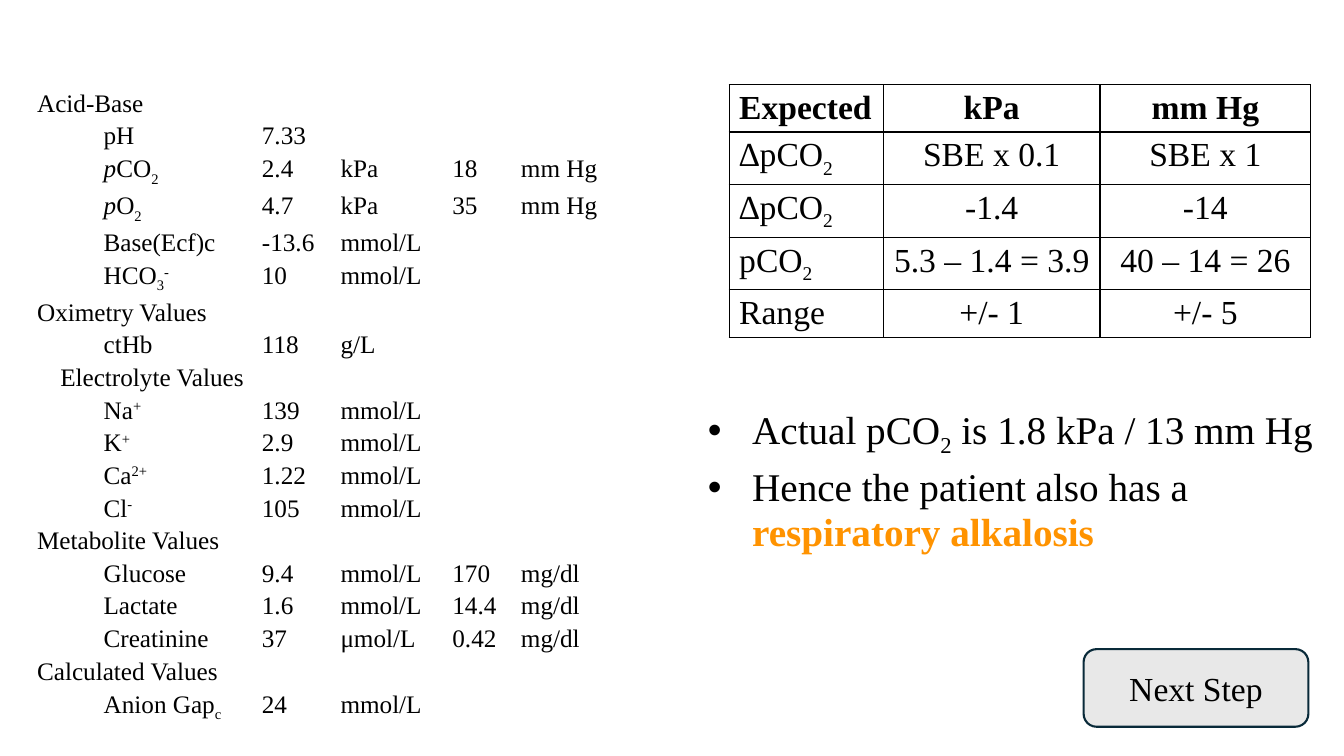
from pptx import Presentation
from pptx.dml.color import RGBColor
from pptx.enum.shapes import MSO_SHAPE as Shape
from pptx.enum.text import MSO_ANCHOR as Anchor, MSO_AUTO_SIZE as AutoSize, PP_ALIGN as Align
from pptx.oxml import parse_xml
from pptx.oxml.ns import nsdecls
from pptx.util import Inches, Pt

COLUMNS, ROWS = 80, 45
TABS = [1.38, 3.96, 13.38, 18.06, 24.72, 28.8]

VALUES = [
    "Acid-Base",
    "\t\tpH\t7.33",
    "\t\t|/p|CO|_2|\t2.4\tkPa\t18\tmm Hg",
    "\t\t|/p|O|_2|\t4.7\tkPa\t35\tmm Hg",
    "\t\tBase(Ecf)c\t-13.6\tmmol/L",
    "\t\tHCO|_3|^-|\t10\tmmol/L",
    "Oximetry Values",
    "\t\tctHb\t118\tg/L",
    "\tElectrolyte Values",
    "\t\tNa|^+|\t139\tmmol/L",
    "\t\tK|^+|\t2.9\tmmol/L",
    "\t\tCa|^2+|\t1.22\tmmol/L",
    "\t\tCl|^-|\t105\tmmol/L",
    "Metabolite Values",
    "\t\tGlucose\t9.4\tmmol/L\t170\tmg/dl",
    "\t\tLactate\t1.6\tmmol/L\t14.4\tmg/dl",
    "\t\tCreatinine\t37\tμmol/L\t0.42\tmg/dl",
    "Calculated Values",
    "\t\tAnion Gap|_c|\t24\tmmol/L",
]
EXPECTED = [
    ["Expected", "kPa", "mm Hg"],
    ["∆pCO|_2", "SBE x 0.1", "SBE x 1"],
    ["∆pCO|_2", "-1.4", "-14"],
    ["pCO|_2", "5.3 – 1.4 = 3.9", "40 – 14 = 26"],
    ["Range", "+/- 1", "+/- 5"],
]
FINDINGS = [
    "Actual pCO|_2| is 1.8 kPa / 13 mm Hg",
    "Hence the patient also has a |*respiratory alkalosis",
]


def color(value):
    return RGBColor.from_string(value)


class Sheet:
    font_name = "Times New Roman"
    ink = "000000"
    accent = "FF9300"

    def __init__(self):
        self.deck = Presentation()
        self.deck.slide_width, self.deck.slide_height = Inches(13.33), Inches(7.5)
        self.page = self.deck.slides.add_slide(self.deck.slide_layouts[1])
        title = self.page.shapes.title
        title.element.getparent().remove(title.element)

    def across(self, columns):
        return round(self.deck.slide_width * columns / COLUMNS)

    def down(self, rows):
        return round(self.deck.slide_height * rows / ROWS)

    def area(self, left, top, width, height):
        return self.across(left), self.down(top), self.across(width), self.down(height)

    def typeset(self, para, text, size, bold=False, align=Align.LEFT):
        para.alignment = align
        para.font.name, para.font.size, para.font.bold = self.font_name, Pt(size), bold
        para.font.color.rgb = color(self.ink)
        for part in text.split("|"):
            mark = part[0] if part[0] in "_^/*" else ""
            span = para.add_run()
            span.text = part[len(mark):]
            if mark in ("_", "^"):
                span._r.get_or_add_rPr().set("baseline", "-25000" if mark == "_" else "30000")
            elif mark == "/":
                span.font.italic = True
            elif mark == "*":
                span.font.bold = True
                span.font.color.rgb = color(self.accent)

    def paragraphs(self, frame, lines):
        for index, line in enumerate(lines):
            yield (frame.add_paragraph() if index else frame.paragraphs[0]), line

    def tabbed_list(self, lines, place, size):
        box = self.page.shapes.add_textbox(*self.area(*place))
        frame = box.text_frame
        frame.word_wrap, frame.auto_size = True, AutoSize.SHAPE_TO_FIT_TEXT
        stops = "".join(f'<a:tab pos="{self.across(tab)}" algn="l"/>' for tab in TABS)
        for para, line in self.paragraphs(frame, lines):
            para._p.get_or_add_pPr().append(
                parse_xml(f'<a:tabLst {nsdecls("a")}>{stops}</a:tabLst>'))
            para.line_spacing = 1.08
            self.typeset(para, line, size)

    def bullets(self, lines, place, size):
        body = self.page.placeholders[1]
        body.left, body.top, body.width, body.height = self.area(*place)
        frame = body.text_frame
        frame.word_wrap, frame.auto_size = True, AutoSize.NONE
        for para, line in self.paragraphs(frame, lines):
            props = para._p.get_or_add_pPr()
            props.set("marL", str(self.across(3)))
            props.set("indent", str(self.across(-2.64)))
            for xml in (f'<a:buClr {nsdecls("a")}><a:srgbClr val="{self.ink}"/></a:buClr>',
                        f'<a:buFont {nsdecls("a")} typeface="Arial"/>',
                        f'<a:buChar {nsdecls("a")} char="•"/>'):
                props.append(parse_xml(xml))
            para.line_spacing = 0.97
            para.space_before = Pt(0 if line == lines[0] else 5.6)
            self.typeset(para, line, size)

    def table(self, data, left, top, widths, heights, size):
        place = self.area(left, top, sum(widths), sum(heights))
        table = self.page.shapes.add_table(len(data), len(widths), *place).table
        table.first_row = table.horz_banding = False
        for column, width in zip(table.columns, widths):
            column.width = self.across(width)
        for r, (row, height) in enumerate(zip(data, heights)):
            table.rows[r].height = self.down(height)
            for c, text in enumerate(row):
                cell = table.cell(r, c)
                self.border(cell)
                cell.fill.background()
                self.typeset(cell.text_frame.paragraphs[0], text, size, bold=r == 0,
                             align=Align.CENTER if c else Align.LEFT)

    def border(self, cell):
        props = cell._tc.get_or_add_tcPr()
        for side in "LRTB":
            props.append(parse_xml(
                f'<a:ln{side} {nsdecls("a")} w="12700"><a:solidFill>'
                f'<a:srgbClr val="{self.ink}"/></a:solidFill></a:ln{side}>'))

    def button(self, text, place, size):
        button = self.page.shapes.add_shape(Shape.ROUNDED_RECTANGLE, *self.area(*place))
        button.shadow.inherit = False
        button.fill.solid()
        button.fill.fore_color.rgb = color("E8E8E8")
        button.line.color.rgb = color("092A39")
        button.line.width = Pt(1.5)
        button.text_frame.vertical_anchor = Anchor.MIDDLE
        self.typeset(button.text_frame.paragraphs[0], text, size, align=Align.CENTER)


def main():
    sheet = Sheet()
    sheet.bullets(FINDINGS, (41.17, 23.8, 38.1, 10.68), 28)
    sheet.table(EXPECTED, 43.4, 5.04, [9.18, 12.9, 12.54], [2.82, 3.12, 3.12, 3.12, 2.82], 24)
    sheet.button("Next Step", (64.5, 38.64, 13.38, 4.62), 24)
    sheet.tabbed_list(VALUES, (1.62, 4.74, 37.38, 35.16), 18)
    sheet.deck.save("out.pptx")


if __name__ == "__main__":
    main()
